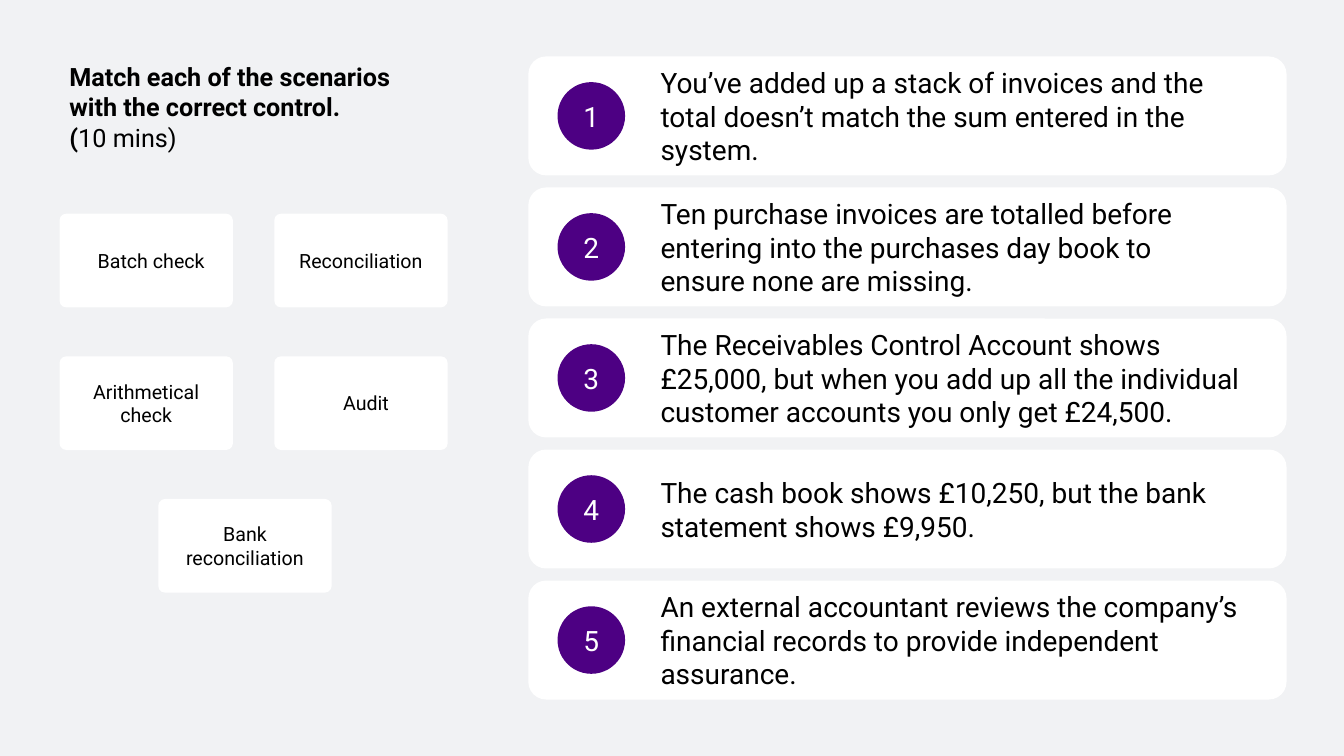
from pptx import Presentation
from pptx.dml.color import RGBColor
from pptx.enum.shapes import MSO_SHAPE
from pptx.enum.text import MSO_ANCHOR, PP_ALIGN
from pptx.util import Inches, Pt

ROUNDED = MSO_SHAPE.ROUNDED_RECTANGLE
OVAL = MSO_SHAPE.OVAL
LEFT, CENTER = PP_ALIGN.LEFT, PP_ALIGN.CENTER
TOP, MIDDLE = MSO_ANCHOR.TOP, MSO_ANCHOR.MIDDLE

BACKGROUND = RGBColor(0xF1, 0xF2, 0xF4)
WHITE = RGBColor(0xFF, 0xFF, 0xFF)
BLACK = RGBColor(0, 0, 0)
PURPLE = RGBColor(0x4D, 0, 0x83)
FONT = "Roboto"

INSTRUCTION = [
    [("Match each of the scenarios with the correct control.", True)],
    [("(", True), ("10 mins)", False)],
]
# Label, grid column, grid row, sideways shift of the text in inches
CONTROLS = [
    ("Batch check", 0, 0, 0.05),
    ("Reconciliation", 1, 0, 0),
    ("Arithmetical check", 0, 1, 0),
    ("Audit", 1, 1, 0.05),
    ("Bank reconciliation", 0.46, 2, 0),
]
SCENARIOS = [
    "You’ve added up a stack of invoices and the total doesn’t match the sum "
    "entered in the system.",
    "Ten purchase invoices are totalled before entering into the purchases "
    "day book to ensure none are missing.",
    "The Receivables Control Account shows £25,000, but when you add up all "
    "the individual customer accounts you only get £24,500.",
    "The cash book shows £10,250, but the bank statement shows £9,950.",
    "An external accountant reviews the company’s financial records to "
    "provide independent assurance.",
]


def write(holder, paragraphs, size, color=BLACK, align=LEFT, anchor=MIDDLE,
          insets=(0.1, 0.05, 0.1, 0.05)):
    """Fill a shape with text: a string, or paragraphs of (text, bold) runs."""
    if isinstance(paragraphs, str):
        paragraphs = [[(paragraphs, False)]]
    frame = holder.text_frame
    frame.word_wrap = True
    frame.vertical_anchor = anchor
    (frame.margin_left, frame.margin_top,
     frame.margin_right, frame.margin_bottom) = map(Inches, insets)
    for index, runs in enumerate(paragraphs):
        paragraph = frame.add_paragraph() if index else frame.paragraphs[0]
        paragraph.alignment = align
        for text, bold in runs:
            run = paragraph.add_run()
            run.text = text
            run.font.name = FONT
            run.font.size = Pt(size)
            run.font.bold = bold
            run.font.color.rgb = color


def add_plate(slide, kind, box, fill, corner=None):
    """Add a flat filled shape without outline or shadow."""
    plate = slide.shapes.add_shape(kind, *map(Inches, box))
    plate.shadow.inherit = False
    plate.fill.solid()
    plate.fill.fore_color.rgb = fill
    plate.line.fill.background()
    if corner is not None:
        plate.adjustments[0] = corner
    return plate


def add_instruction(slide, box):
    instruction = slide.shapes.add_textbox(*map(Inches, box))
    write(instruction, INSTRUCTION, 18, anchor=TOP)


def add_controls(slide, box):
    """Place the control cards on a grid of two columns and three rows."""
    left, top, width, height = box
    card_width, card_height = 1.72, 0.93
    column_step = width - card_width
    row_step = (height - card_height) / 2
    for label, column, row, shift in CONTROLS:
        card = add_plate(slide, ROUNDED,
                         (left + column * column_step, top + row * row_step,
                          card_width, card_height), WHITE, 0.073)
        write(card, label, 14, align=CENTER,
              insets=(0.1 + shift, 0.05, 0.1 - shift, 0.05))


def add_scenarios(slide, box):
    """Stack the numbered scenario cards at equal gaps."""
    left, top, width, height = box
    gap, badge_size, badge_indent = 0.12, 0.67, 0.29
    step = (height + gap) / len(SCENARIOS)
    card_height = step - gap
    for index, scenario in enumerate(SCENARIOS):
        card_top = top + index * step
        card = add_plate(slide, ROUNDED, (left, card_top, width, card_height),
                         WHITE, 0.149)
        write(card, scenario, 20, insets=(1.26, 0, 0.39, 0))
        badge = add_plate(slide, OVAL,
                          (left + badge_indent,
                           card_top + (card_height - badge_size) / 2,
                           badge_size, badge_size), PURPLE)
        write(badge, str(index + 1), 20, color=WHITE, align=CENTER)


def main():
    deck = Presentation()
    deck.slide_width, deck.slide_height = Inches(13.33), Inches(7.5)
    slide = deck.slides.add_slide(deck.slide_layouts[6])
    slide.background.fill.solid()
    slide.background.fill.fore_color.rgb = BACKGROUND
    add_scenarios(slide, (5.24, 0.56, 7.52, 6.38))
    add_instruction(slide, (0.59, 0.56, 3.66, 1.31))
    add_controls(slide, (0.59, 2.12, 3.85, 3.76))
    deck.save("out.pptx")


if __name__ == "__main__":
    main()
